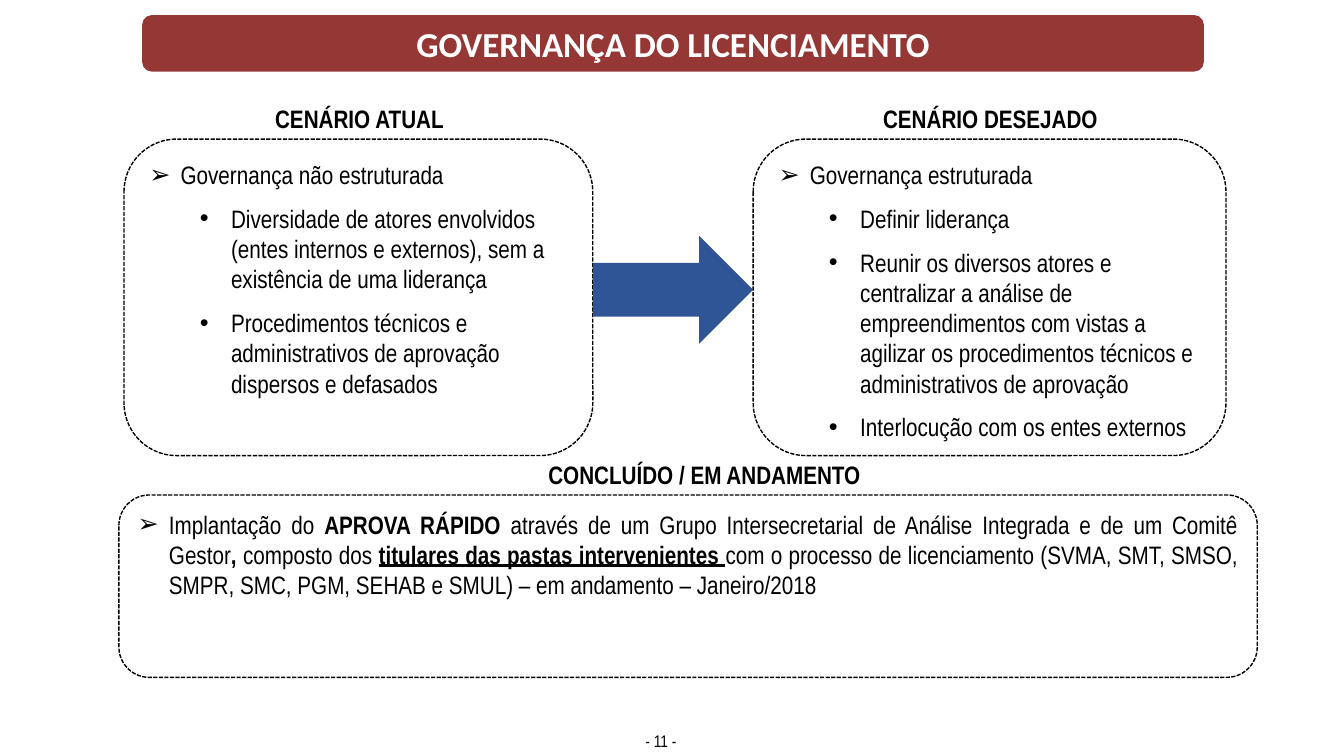
from dataclasses import dataclass
from lxml import etree
from pptx import Presentation, util as u
from pptx.dml.color import RGBColor
from pptx.enum import dml, shapes, text
from pptx.oxml.ns import qn


@dataclass(frozen=True)
class Theme:
    banner: str = "953735"
    arrow: str = "2F5597"
    ink: str = "000000"
    paper: str = "FFFFFF"
    body_font: str = "Arial Narrow"
    title_font: str = "Calibri"
    title: int = 25
    body: int = 18
    page: int = 12
    gap: float = 9.6
    indent: float = 0.31
    level_step: float = 0.5


T = Theme()
WIDTH, HEIGHT = 13.33, 7.5

TITLE = "GOVERNANÇA DO LICENCIAMENTO"
PAGE = "- 11 -"
SCENARIOS = [
    ("CENÁRIO ATUAL", 9.23, 34.88, 14.18, [
        (0, "Governança não estruturada"),
        (1, "Diversidade de atores envolvidos (entes internos e externos), "
            "sem a existência de uma liderança"),
        (1, "Procedimentos técnicos e administrativos de aprovação dispersos e defasados"),
    ]),
    ("CENÁRIO DESEJADO", 56.04, 35.18, 17.63, [
        (0, "Governança estruturada"),
        (1, "Definir liderança"),
        (1, "Reunir os diversos atores e centralizar a análise de empreendimentos com vistas "
            "a agilizar os procedimentos técnicos e administrativos de aprovação"),
        (1, "Interlocução com os entes externos"),
    ]),
]
PROGRESS = "CONCLUÍDO / EM ANDAMENTO"
PROGRESS_RUNS = [
    ("Implantação do ", ""),
    ("APROVA RÁPIDO ", "b"),
    ("através de um Grupo Intersecretarial de Análise Integrada e de um Comitê Gestor", ""),
    (", ", "b"),
    ("composto dos ", ""),
    ("titulares das pastas intervenientes ", "bu"),
    ("com o processo de licenciamento (SVMA, SMT, SMSO, SMPR, SMC, PGM, SEHAB e SMUL) "
     "– em andamento – Janeiro/2018 ", ""),
]

BANNER = (10.58, 2, 78.99, 7.47)
PROGRESS_BOX = (8.85, 65.47, 84.7, 24.13)
PROGRESS_LABEL = (40.06, 60.13, 24.98, 5.33)
PAGE_BOX = (46.89, 96, 4.58, 5.33)
SCENARIO_TOP, SCENARIO_HEIGHT = 18.4, 41.87
LABEL_TOP, LABEL_HEIGHT, LABEL_SHIFT = 13, 5.33, 0.15
ARROW_TOP, ARROW_HEIGHT = 31.2, 14.27
MARKS = "➢•"
MARK_FONTS = ("Wingdings", "Arial")

prs = Presentation()
prs.slide_width, prs.slide_height = u.Inches(WIDTH), u.Inches(HEIGHT)
s = prs.slides.add_slide(prs.slide_layouts[6])


def place(left, top, width, height):
    return [u.Inches(share * side / 100) for share, side in
            ((left, WIDTH), (top, HEIGHT), (width, WIDTH), (height, HEIGHT))]


def write(p, content, size=T.body, font=T.body_font, color=T.ink, align="LEFT", style=""):
    runs = [(content, style)] if isinstance(content, str) else content
    p.alignment = getattr(text.PP_ALIGN, align)
    for words, look in runs:
        r = p.add_run()
        r.text = words
        r.font.size, r.font.name = u.Pt(size), font
        r.font.color.rgb = RGBColor.from_string(color)
        r.font.bold, r.font.underline = "b" in look, "u" in look


def bullet(p, level):
    p.level = level
    pPr = p._p.get_or_add_pPr()
    pPr.set("marL", str(u.Inches(T.indent + level * T.level_step)))
    pPr.set("indent", str(-u.Inches(T.indent)))
    etree.SubElement(pPr, qn("a:buFont")).set("typeface", "Arial")
    etree.SubElement(pPr, qn("a:buChar")).set("char", MARKS[level])


def add_shape(kind, box, fill=None):
    sp = s.shapes.add_shape(kind, *place(*box))
    sp.shadow.inherit = False
    if fill:
        sp.fill.solid()
        sp.fill.fore_color.rgb = RGBColor.from_string(fill)
        sp.line.fill.background()
    else:
        sp.fill.background()
        sp.line.color.rgb = RGBColor.from_string(T.ink)
        sp.line.width = u.Pt(1)
        sp.line.dash_style = dml.MSO_LINE.SQUARE_DOT
    return sp


def add_panel(box, items, align="LEFT"):
    tf = add_shape(shapes.MSO_SHAPE.ROUNDED_RECTANGLE, box).text_frame
    tf.word_wrap = True
    tf.vertical_anchor = text.MSO_ANCHOR.TOP
    for i, (level, content) in enumerate(items):
        p = tf.add_paragraph() if i else tf.paragraphs[0]
        p.space_before = u.Pt(T.gap if i else 0)
        write(p, content, align=align)
        bullet(p, level)


def add_label(box, content, **look):
    tf = s.shapes.add_textbox(*place(*box)).text_frame
    tf.word_wrap = False
    write(tf.paragraphs[0], content, **look)


add_label(PAGE_BOX, PAGE, size=T.page, align="CENTER")

for name, left, width, label_width, items in SCENARIOS:
    add_panel((left, SCENARIO_TOP, width, SCENARIO_HEIGHT), items)
    label_left = left + (width - label_width) / 2 + LABEL_SHIFT
    add_label((label_left, LABEL_TOP, label_width, LABEL_HEIGHT), name, style="b")

arrow_left = SCENARIOS[0][1] + SCENARIOS[0][2]
arrow_width = SCENARIOS[1][1] - arrow_left
add_shape(shapes.MSO_SHAPE.RIGHT_ARROW,
          (arrow_left, ARROW_TOP, arrow_width, ARROW_HEIGHT), T.arrow)

add_label(PROGRESS_LABEL, PROGRESS, style="b")
add_panel(PROGRESS_BOX, [(0, PROGRESS_RUNS)], align="JUSTIFY")

banner = add_shape(shapes.MSO_SHAPE.ROUNDED_RECTANGLE, BANNER, T.banner)
banner.text_frame.vertical_anchor = text.MSO_ANCHOR.MIDDLE
write(banner.text_frame.paragraphs[0], TITLE, size=T.title, font=T.title_font,
      color=T.paper, align="CENTER", style="b")

prs.save("out.pptx")
